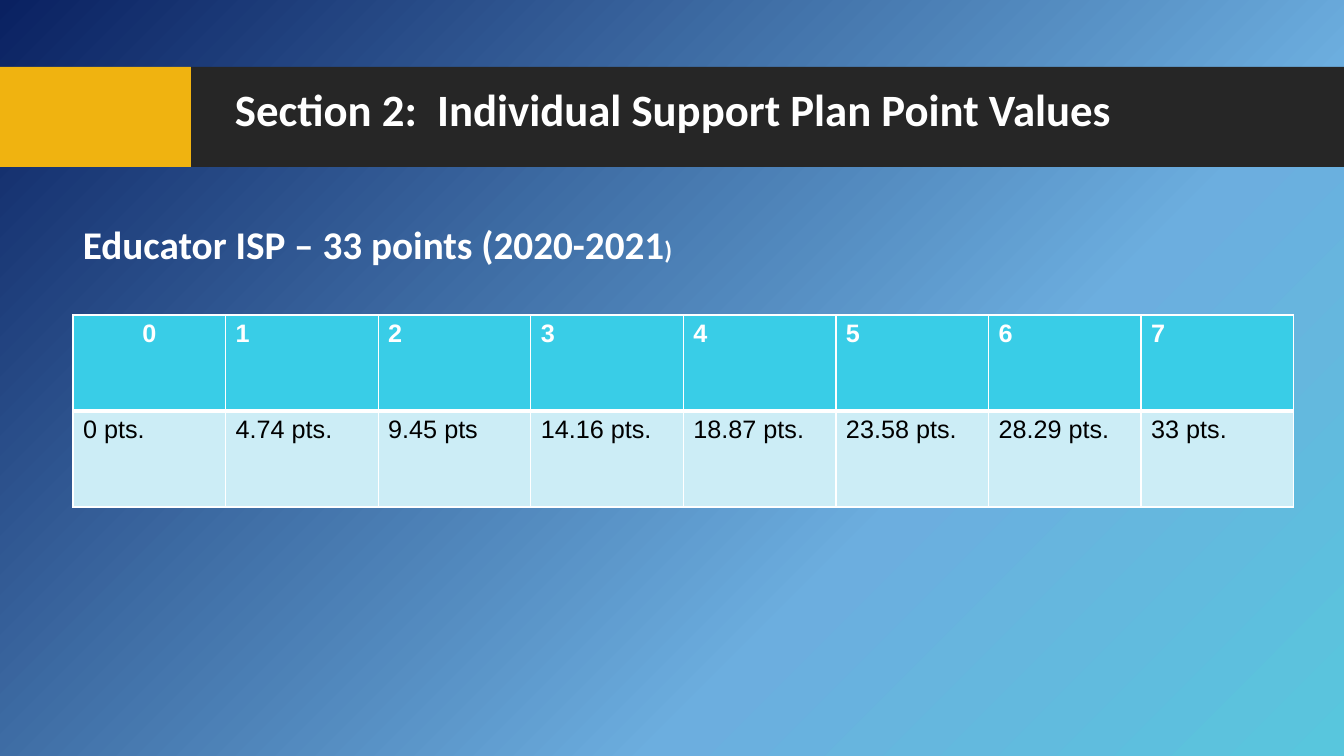
from copy import deepcopy
from typing import NamedTuple

from lxml.etree import SubElement as Sub
from pptx import Presentation
from pptx.dml.color import RGBColor as RGB
from pptx.enum.shapes import MSO_SHAPE as Shape
from pptx.enum.text import MSO_ANCHOR as Anchor, PP_ALIGN as Align
from pptx.oxml.ns import qn
from pptx.slide import Slide
from pptx.table import _Cell as Cell
from pptx.text.text import TextFrame as Frame
from pptx.util import Emu, Pt

SCALE = 12192000 / 1344

WHITE = RGB(0xFF, 0xFF, 0xFF)
BLACK = RGB(0x00, 0x00, 0x00)
DARK = RGB(0x26, 0x26, 0x26)
GOLD = RGB(0xF0, 0xB3, 0x10)
CYAN = RGB(0x39, 0xCD, 0xE7)
PALE = RGB(0xCC, 0xED, 0xF6)
TEAL = RGB(0x58, 0xC6, 0xDD)
SKY = RGB(0x6C, 0xAE, 0xDF)
NAVY = RGB(0x0A, 0x21, 0x61)


class Box(NamedTuple):
    left: int
    top: int
    width: int
    height: int


class Band(NamedTuple):
    box: Box
    fill: RGB


class Label(NamedTuple):
    box: Box
    runs: list[tuple[str, int]]
    space: float


class Row(NamedTuple):
    texts: list[str]
    fill: RGB
    color: RGB
    bold: bool
    edges: dict[str, int]


BANDS = [
    Band(Box(191, 67, 1153, 100), DARK),
    Band(Box(0, 67, 191, 100), GOLD),
]
LABELS = [
    Label(Box(225, 83, 1107, 70),
          [("Section 2:  Individual Support Plan Point Values", 32)], 0.9),
    Label(Box(73, 215, 702, 93),
          [("Educator ISP – 33 points (2020-2021", 28), (")", 18)], 1.0),
]
ROWS = [
    Row([str(n) for n in range(8)], CYAN, WHITE, True,
        {"L": 1, "R": 1, "T": 1, "B": 3}),
    Row(["0 pts.", "4.74 pts.", "9.45 pts", "14.16 pts.", "18.87 pts.",
         "23.58 pts.", "28.29 pts.", "33 pts."], PALE, BLACK, False,
        {"L": 1, "R": 1, "B": 1}),
]
GRID = Box(73, 315, 1221, 192)
STOPS = [(0, TEAL), (0.33, SKY), (1, NAVY)]


def px(size: int) -> Emu:
    return Emu(round(size * SCALE))


def place(box: Box) -> list[Emu]:
    return [px(size) for size in box]


def write(frame: Frame, runs: list[tuple[str, int]], *, face: str = "Calibri",
          color: RGB = WHITE, bold: bool = True, align: Align = Align.LEFT,
          space: float = 1.0) -> None:
    para = frame.paragraphs[0]
    para.alignment = align
    para.line_spacing = space
    for text, size in runs:
        run = para.add_run()
        run.text = text
        run.font.name = face
        run.font.size = Pt(size)
        run.font.bold = bold
        run.font.color.rgb = color


def paint(slide: Slide) -> None:
    fill = slide.background.fill
    fill.gradient()
    fill.gradient_angle = 135
    stops = slide.element.find(".//" + qn("a:gsLst"))
    stops.append(deepcopy(stops[0]))
    for stop, (pos, color) in zip(fill.gradient_stops, STOPS):
        stop.position = pos
        stop.color.rgb = color


def draw_band(slide: Slide, band: Band) -> None:
    shape = slide.shapes.add_shape(Shape.RECTANGLE, *place(band.box))
    shape.shadow.inherit = False
    shape.fill.solid()
    shape.fill.fore_color.rgb = band.fill
    shape.line.fill.background()


def draw_label(slide: Slide, label: Label) -> None:
    frame = slide.shapes.add_textbox(*place(label.box)).text_frame
    frame.word_wrap = True
    frame.vertical_anchor = Anchor.TOP
    write(frame, label.runs, space=label.space)


def edge(cell: Cell, edges: dict[str, int]) -> None:
    props = cell._tc.get_or_add_tcPr()
    for side, width in edges.items():
        line = Sub(props, qn(f"a:ln{side}"), w=str(Pt(width)))
        Sub(Sub(line, qn("a:solidFill")), qn("a:srgbClr"), val=str(WHITE))


def draw_grid(slide: Slide) -> None:
    count = len(ROWS[0].texts)
    table = slide.shapes.add_table(len(ROWS), count, *place(GRID)).table
    table.horz_banding = False
    for y, row in enumerate(ROWS):
        for x, text in enumerate(row.texts):
            cell = table.cell(y, x)
            edge(cell, row.edges)
            cell.fill.solid()
            cell.fill.fore_color.rgb = row.fill
            align = Align.CENTER if x == y == 0 else Align.LEFT
            write(cell.text_frame, [(text, 18)], face="Arial",
                  color=row.color, bold=row.bold, align=align)


def main() -> None:
    deck = Presentation()
    deck.slide_width, deck.slide_height = px(1344), px(756)
    slide = deck.slides.add_slide(deck.slide_layouts[6])
    paint(slide)
    for band in BANDS:
        draw_band(slide, band)
    for label in LABELS:
        draw_label(slide, label)
    draw_grid(slide)
    deck.save("out.pptx")


if __name__ == "__main__":
    main()
